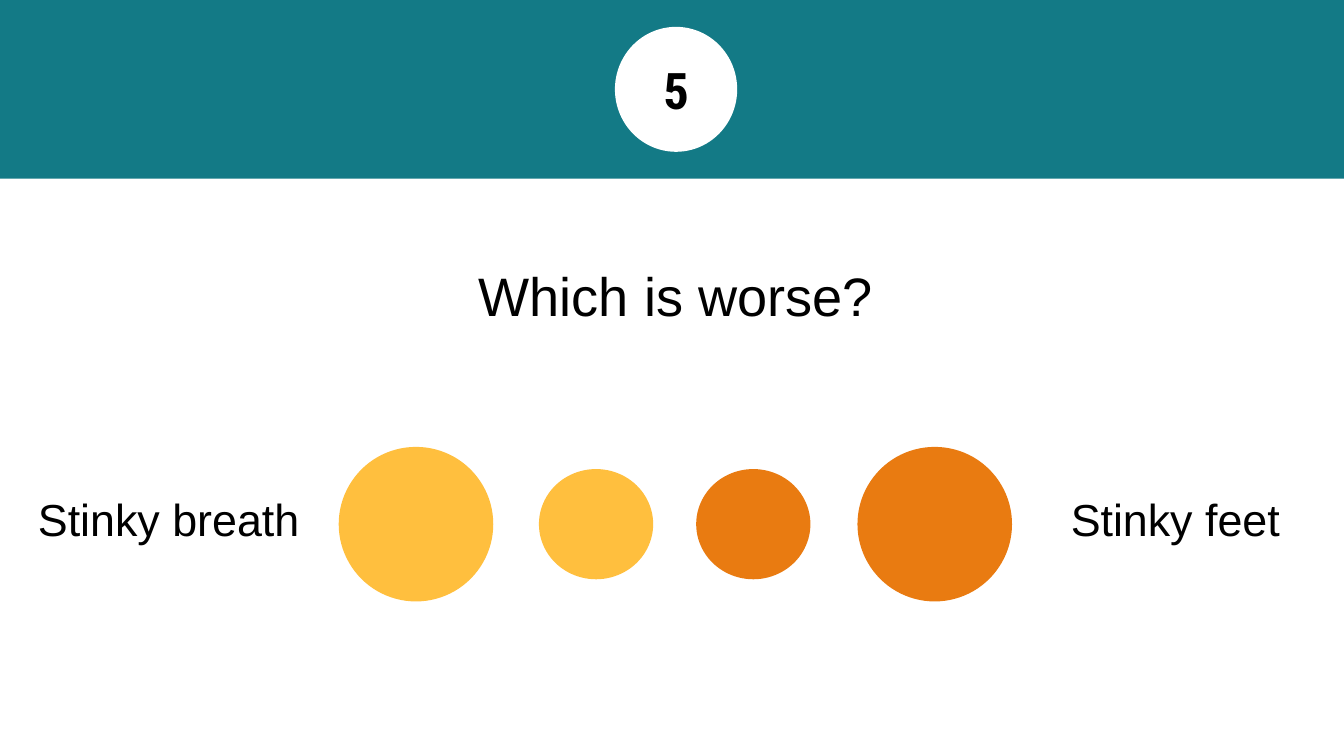
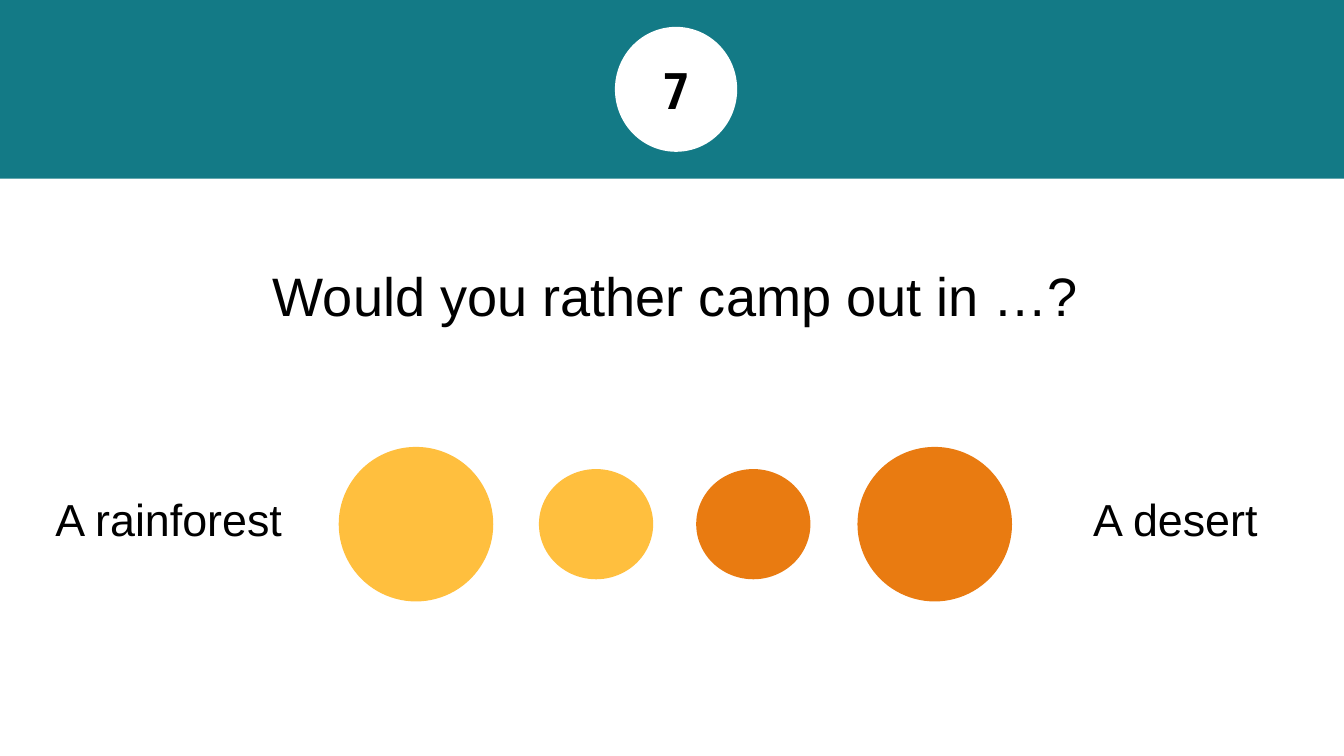
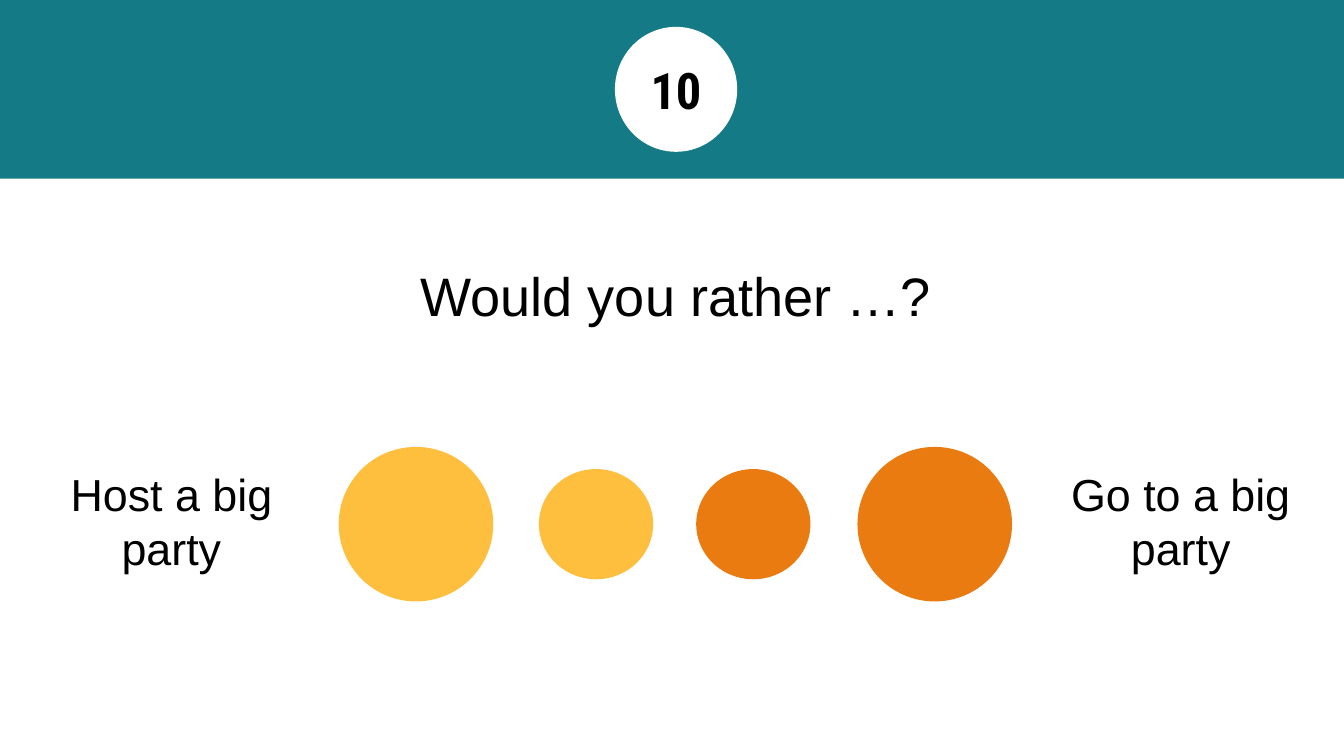
import pptx
import pptx.dml.color
import pptx.enum.shapes
import pptx.enum.text
import pptx.util
from pptx.util import Inches

# number, question, (first choice, second choice), left edges of the choices, lines per choice
QUESTIONS = [
    (5, "Which is worse?", ("Stinky breath", "Stinky feet"), (0.03, 7.52), 1),
    (7, "Would you rather camp out in …?", ("A rainforest", "A desert"), (0.03, 7.52), 1),
    (10, "Would you rather …?", ("Host a big party", "Go to a big party"), (0.05, 7.56), 2),
]

THEME = {
    "band": "137A86",
    "badge": "FFFFFF",
    "first": "FFBF3E",
    "second": "E97B11",
    "ink": "000000",
    "number": {"name": "Roboto Condensed", "size": 27, "bold": True},
    "question": {"name": "Arial", "size": 29, "bold": False},
    "choice": {"name": "Arial", "size": 24, "bold": False},
}

SLIDE_WIDTH = 10
SLIDE_HEIGHT = SLIDE_WIDTH * 9 / 16
MIDDLE = 5.03
CHOICE_ROW = 3.9
CHOICE_WIDTH = 2.45
CHOICE_HEIGHTS = {1: 0.69, 2: 1.05}
BAND_WIDTH, BAND_HEIGHT = 10.03, 1.33

# left edge, width, height, colour
CIRCLES = [
    (2.52, 1.15, 1.15, "first"),
    (6.38, 1.15, 1.15, "second"),
    (4.01, 0.85, 0.82, "first"),
    (5.18, 0.85, 0.82, "second"),
]

SHAPES = pptx.enum.shapes.MSO_SHAPE
ANCHORS = pptx.enum.text.MSO_ANCHOR


def on_row(left, row, width, height):
    """Return the box that starts at left and is centred vertically on row."""
    return [Inches(length) for length in (left, row - height / 2, width, height)]


def in_middle(row, width, height):
    return on_row(MIDDLE - width / 2, row, width, height)


def write(holder, text, style, anchor):
    frame = holder.text_frame
    frame_format = {"word_wrap": True, "vertical_anchor": anchor}
    for side in ("left", "right", "top", "bottom"):
        frame_format[f"margin_{side}"] = Inches(0.1)
    for attribute, value in frame_format.items():
        setattr(frame, attribute, value)

    paragraph = frame.paragraphs[0]
    paragraph.text = text
    paragraph.alignment = pptx.enum.text.PP_ALIGN.CENTER
    font = paragraph.runs[0].font
    font_format = {**THEME[style], "size": pptx.util.Pt(THEME[style]["size"])}
    for attribute, value in font_format.items():
        setattr(font, attribute, value)
    font.color.rgb = rgb("ink")


def rgb(colour):
    return pptx.dml.color.RGBColor.from_string(THEME[colour])


def add_filled(slide, kind, box, colour):
    shape = slide.shapes.add_shape(kind, *box)
    shape.shadow.inherit = False
    shape.fill.solid()
    shape.fill.fore_color.rgb = rgb(colour)
    shape.line.fill.background()
    return shape


def add_label(slide, box, text, style):
    write(slide.shapes.add_textbox(*box), text, style, ANCHORS.TOP)


def add_question(deck, number, question, choices, choice_lefts, choice_lines):
    slide = deck.slides.add_slide(deck.slide_layouts[6])
    band_row = BAND_HEIGHT / 2
    add_filled(slide, SHAPES.RECTANGLE, on_row(0, band_row, BAND_WIDTH, BAND_HEIGHT), "band")
    badge = add_filled(slide, SHAPES.OVAL, in_middle(band_row, 0.91, 0.93), "badge")
    write(badge, str(number), "number", ANCHORS.MIDDLE)

    add_label(slide, in_middle(2.2, 9.32, 0.69), question, "question")
    for left, width, height, colour in CIRCLES:
        add_filled(slide, SHAPES.OVAL, on_row(left, CHOICE_ROW, width, height), colour)
    choice_height = CHOICE_HEIGHTS[choice_lines]
    for choice, left in zip(choices, choice_lefts):
        add_label(slide, on_row(left, CHOICE_ROW, CHOICE_WIDTH, choice_height), choice, "choice")


def main():
    deck = pptx.Presentation()
    deck.slide_width, deck.slide_height = Inches(SLIDE_WIDTH), Inches(SLIDE_HEIGHT)
    for entry in QUESTIONS:
        add_question(deck, *entry)
    deck.save("out.pptx")


if __name__ == "__main__":
    main()
